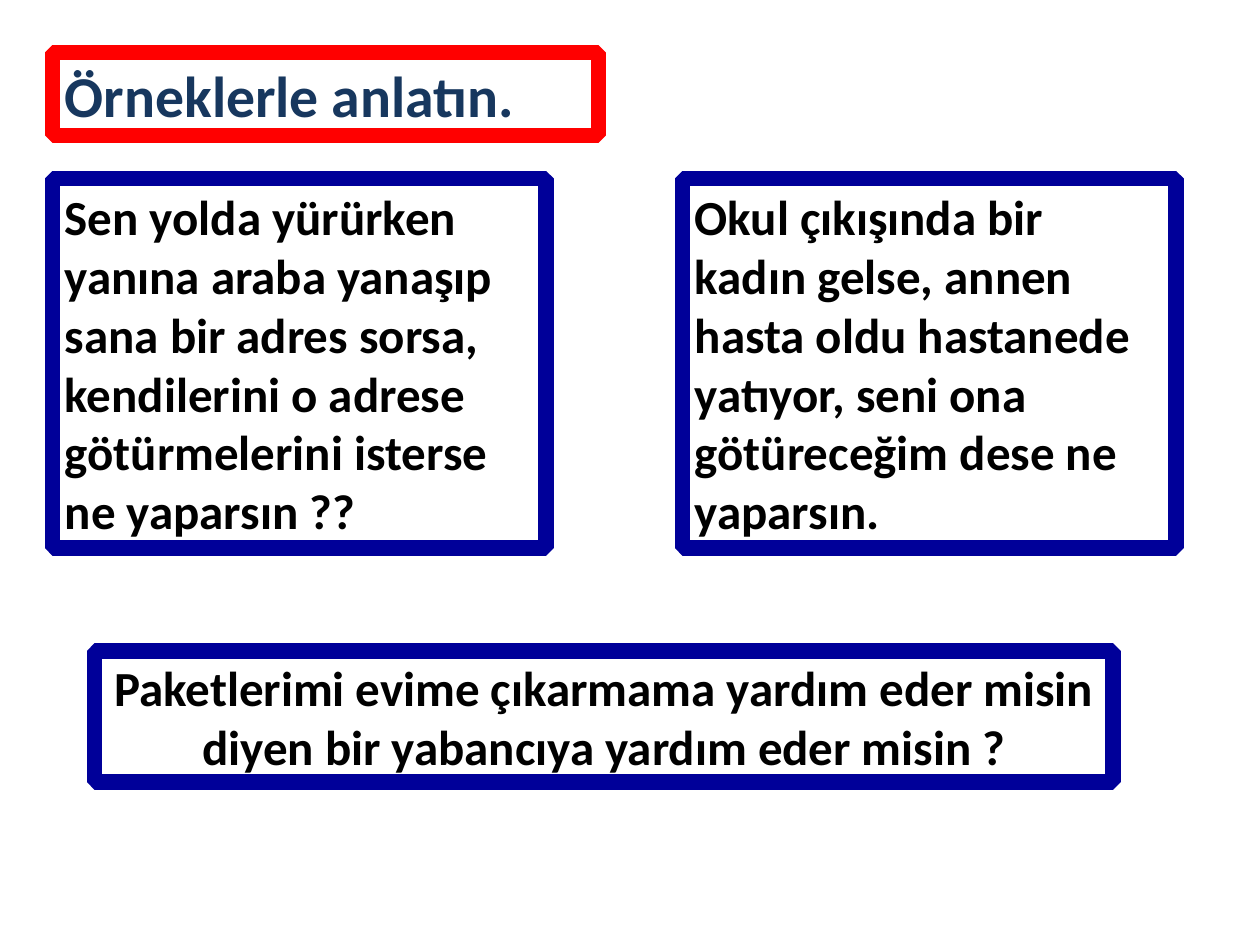
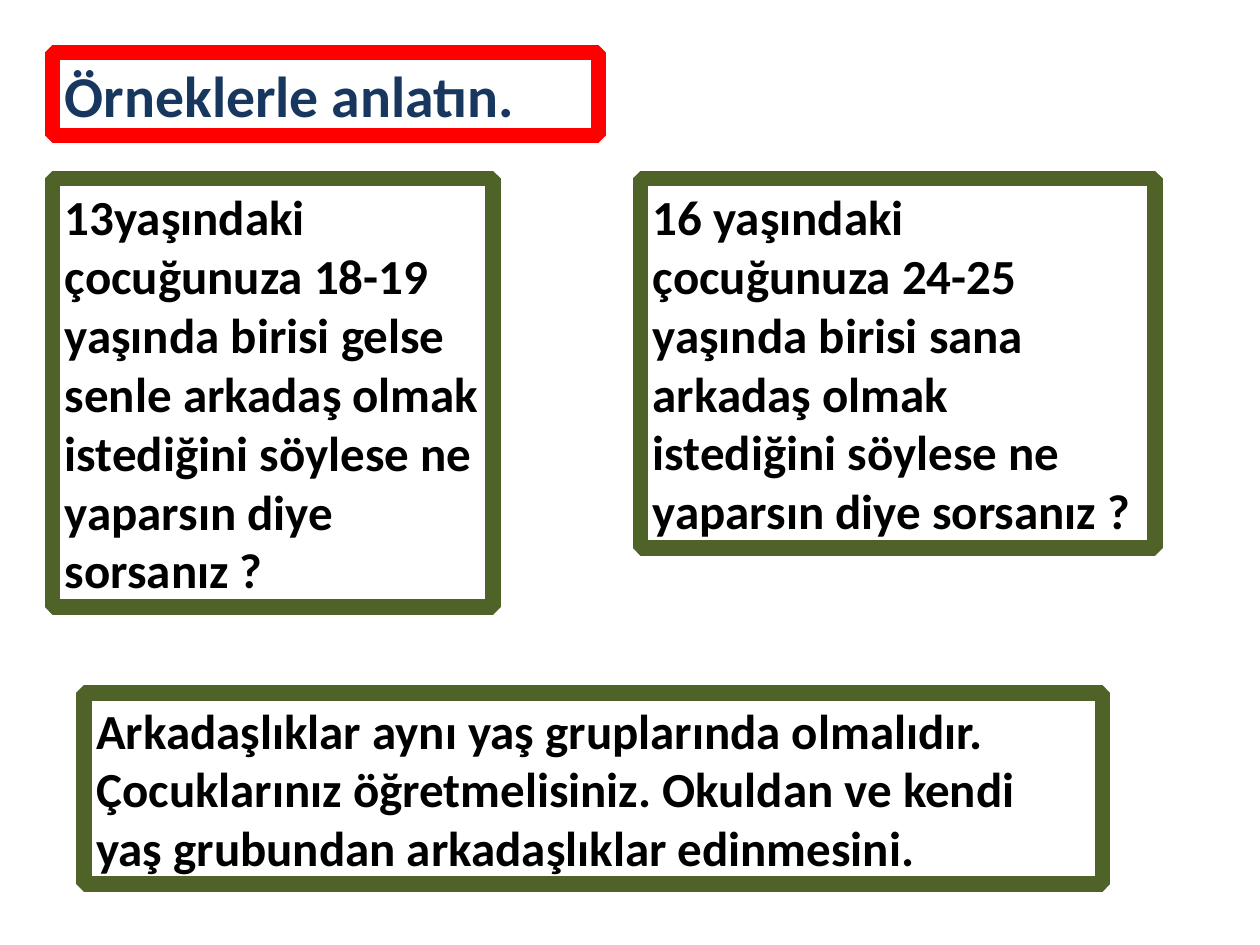
from lxml.etree import SubElement
from pptx import Presentation
from pptx.dml.color import RGBColor
from pptx.enum.shapes import MSO_SHAPE
from pptx.enum.text import MSO_ANCHOR, MSO_AUTO_SIZE, PP_ALIGN
from pptx.oxml.ns import qn
from pptx.util import Pt

COLORS = {
    "paper": "FFFFFF",
    "title": "17375E",
    "title_frame": "FF0000",
    "text": "000000",
    "blue": "000099",
    "green": "4F6228",
}
FONT = "Calibri"
LEFT = 30        # left edge of the title and the first box
BOX_TOP = 102    # top of the upper pair of boxes


def rgb(name):
    return RGBColor.from_string(COLORS[name])


def add_framed_text(slide, text, box, frame, size=28, color="text",
                    align=PP_ALIGN.LEFT):
    """White rectangle with a thick bevelled frame and bold text."""
    sp = slide.shapes.add_shape(MSO_SHAPE.RECTANGLE, *map(Pt, box))
    sp.shadow.inherit = False
    sp.fill.solid()
    sp.fill.fore_color.rgb = rgb("paper")
    sp.line.color.rgb = rgb(frame)
    sp.line.width = Pt(9)
    SubElement(sp.line._get_or_add_ln(), qn("a:bevel"))

    tf = sp.text_frame
    tf.word_wrap = True
    tf.auto_size = MSO_AUTO_SIZE.SHAPE_TO_FIT_TEXT
    tf.vertical_anchor = MSO_ANCHOR.MIDDLE
    p = tf.paragraphs[0]
    p.text = text
    p.alignment = align
    p.font.name = FONT
    p.font.size = Pt(size)
    p.font.bold = True
    p.font.color.rgb = rgb(color)


def add_example_slide(prs, frame, examples):
    """Titled slide with example boxes that share one frame colour."""
    slide = prs.slides.add_slide(prs.slide_layouts[6])
    add_framed_text(slide, "Örneklerle anlatın.", (LEFT, 30, 312, 47.5),
                    "title_frame", size=33, color="title")
    for text, box, align in examples:
        add_framed_text(slide, text, box, frame, align=align)


def main():
    prs = Presentation()
    prs.slide_width, prs.slide_height = Pt(720), Pt(540)

    # Meeting strangers
    add_example_slide(prs, "blue", [
        ("Sen yolda yürürken yanına araba yanaşıp sana bir adres sorsa, "
         "kendilerini o adrese götürmelerini isterse ne yaparsın ??",
         (LEFT, BOX_TOP, 282, 211), PP_ALIGN.LEFT),
        ("Okul çıkışında bir kadın gelse, annen hasta oldu hastanede "
         "yatıyor, seni ona götüreceğim dese ne yaparsın.",
         (390, BOX_TOP, 282, 211), PP_ALIGN.LEFT),
        ("Paketlerimi evime çıkarmama yardım eder misin diyen bir "
         "yabancıya yardım eder misin ?",
         (54, 372, 582, 75), PP_ALIGN.CENTER),
    ])

    # Friends of the same age
    add_example_slide(prs, "green", [
        ("13yaşındaki çocuğunuza 18-19 yaşında birisi gelse senle arkadaş "
         "olmak istediğini söylese ne yaparsın diye sorsanız ?",
         (LEFT, BOX_TOP, 252, 245), PP_ALIGN.LEFT),
        ("16 yaşındaki çocuğunuza 24-25 yaşında birisi sana arkadaş olmak "
         "istediğini söylese ne yaparsın diye sorsanız ?",
         (366, BOX_TOP, 294, 211), PP_ALIGN.LEFT),
        ("Arkadaşlıklar aynı yaş gruplarında olmalıdır. Çocuklarınız "
         "öğretmelisiniz. Okuldan ve kendi yaş grubundan arkadaşlıklar "
         "edinmesini.",
         (48, 396, 582, 109), PP_ALIGN.LEFT),
    ])

    prs.save("out.pptx")


if __name__ == "__main__":
    main()
